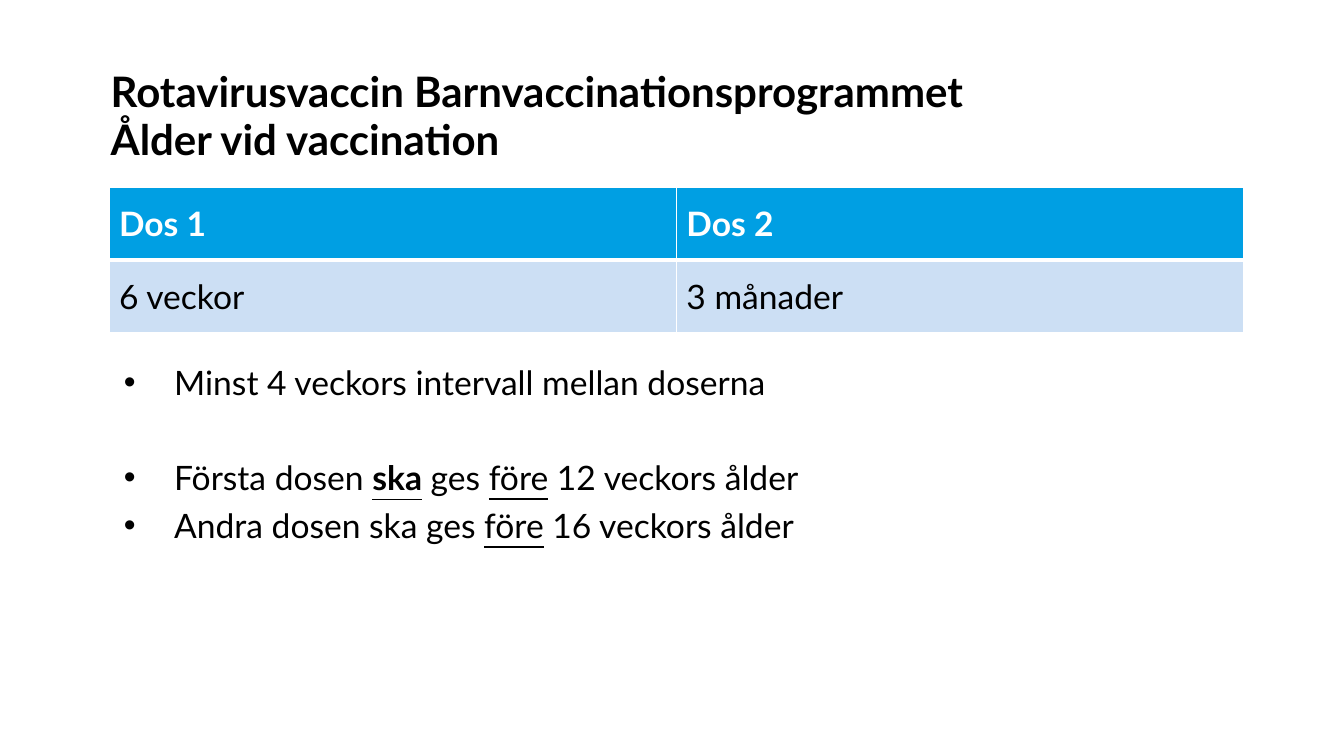
from lxml import etree
from pptx import Presentation
from pptx.dml.color import RGBColor
from pptx.enum.text import MSO_ANCHOR as Anchor
from pptx.oxml.ns import qn
from pptx.util import Pt


def color(value):
    return RGBColor.from_string(value)


class SlideBuilder:
    """Hold the text style and current slide, and add elements to it."""

    font_name = "Lato"
    text_color = "000000"
    edge_color = "FFFFFF"
    body_size = 24

    def __init__(self, slide):
        self.slide = slide

    def add_run(self, paragraph, text, size, fill=text_color, bold=False, underline=False):
        run = paragraph.add_run()
        run.text = text
        font = run.font
        font.name = self.font_name
        font.size = Pt(size)
        font.bold = bold
        font.underline = underline
        font.color.rgb = color(fill)

    def add_text_frame(self, box, top_inset=3.6):
        shape = self.slide.shapes.add_textbox(*map(Pt, box))
        frame = shape.text_frame
        frame.word_wrap = True
        frame.vertical_anchor = Anchor.TOP
        frame.margin_top = Pt(top_inset)
        return frame

    def add_title(self, box, lines):
        frame = self.add_text_frame(box)
        for index, line in enumerate(lines):
            paragraph = frame.add_paragraph() if index else frame.paragraphs[0]
            paragraph.line_spacing = Pt(34)
            self.add_run(paragraph, line, 30, bold=True)

    def add_bullets(self, box, top_inset, items):
        frame = self.add_text_frame(box, top_inset)
        for index, (space_before, runs) in enumerate(items):
            paragraph = frame.add_paragraph() if index else frame.paragraphs[0]
            paragraph.line_spacing = Pt(24)
            paragraph.space_before = Pt(space_before)
            paragraph.space_after = Pt(3)
            properties = paragraph._p.get_or_add_pPr()
            properties.set("marL", str(Pt(42.5)))
            properties.set("indent", str(Pt(-36)))
            etree.SubElement(properties, qn("a:buFont"), typeface="Arial")
            etree.SubElement(properties, qn("a:buChar"), char="•")
            for text, bold, underline in runs:
                self.add_run(paragraph, text, self.body_size, bold=bold, underline=underline)

    def add_border(self, cell, side, width):
        line = etree.SubElement(cell._tc.get_or_add_tcPr(), qn(f"a:ln{side}"), w=str(Pt(width)))
        fill = etree.SubElement(line, qn("a:solidFill"))
        etree.SubElement(fill, qn("a:srgbClr"), val=self.edge_color)

    def add_table(self, box, rows, row_styles):
        shape = self.slide.shapes.add_table(len(rows), len(rows[0]), *map(Pt, box))
        for row, texts, style in zip(shape.table.rows, rows, row_styles):
            fill, text_color, bold, widths = style
            for cell, text in zip(row.cells, texts):
                for side, width in zip("LRTB", widths):
                    self.add_border(cell, side, width)
                cell.fill.solid()
                cell.fill.fore_color.rgb = color(fill)
                cell.vertical_anchor = Anchor.MIDDLE
                paragraph = cell.text_frame.paragraphs[0]
                self.add_run(paragraph, text, self.body_size, text_color, bold)


def main():
    presentation = Presentation()
    presentation.slide_width = Pt(960)
    presentation.slide_height = Pt(540)
    builder = SlideBuilder(presentation.slides.add_slide(presentation.slide_layouts[6]))

    builder.add_title(
        (72, 45.4, 782.6, 72),
        ["Rotavirusvaccin Barnvaccinationsprogrammet", "Ålder vid vaccination"],
    )
    builder.add_bullets(
        (74.9, 157.7, 813.6, 265.7),
        105.6,
        [
            (0, [("Minst 4 veckors intervall mellan doserna", False, False)]),
            (41, [
                ("Första dosen ", False, False),
                ("ska", True, True),
                (" ges ", False, False),
                ("före", False, True),
                (" 12 veckors ålder", False, False),
            ]),
            (7, [
                ("Andra dosen ska ges ", False, False),
                ("före", False, True),
                (" 16 veckors ålder", False, False),
            ]),
        ],
    )
    builder.add_table(
        (77.8, 133.9, 810.7, 103.7),
        [["Dos 1", "Dos 2"], ["6 veckor", "3 månader"]],
        [
            ("009FE3", "FFFFFF", True, (1, 1, 1, 3)),
            ("CCDFF4", "000000", False, (1, 1, 3, 1)),
        ],
    )
    presentation.save("out.pptx")


if __name__ == "__main__":
    main()
